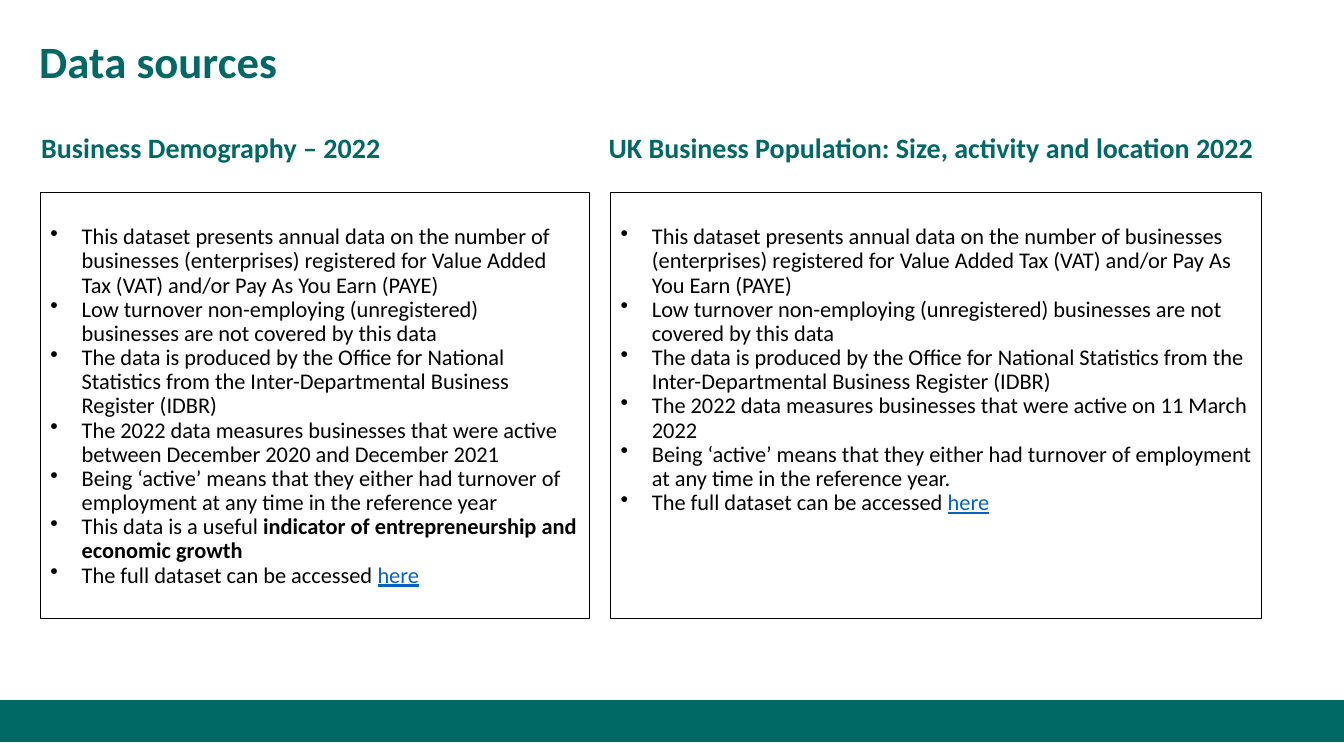
import pptx
import pptx.dml.color
import pptx.enum.shapes
import pptx.enum.text
import pptx.oxml.ns
import pptx.util
from lxml import etree

Cm = pptx.util.Cm
Pt = pptx.util.Pt
ANCHOR = pptx.enum.text.MSO_ANCHOR

COLORS = {"teal": "006965", "text": "000000", "link": "0563C1"}

SHARED = [
    [("This dataset presents annual data on the number of businesses (enterprises) "
      "registered for Value Added Tax (VAT) and/or Pay As You Earn (PAYE)", {})],
    [("Low turnover non-employing (unregistered) businesses are not covered by this data", {})],
    [("The data is produced by the Office for National Statistics from the "
      "Inter-Departmental Business Register (IDBR)", {})],
]
ACCESS = [("The full dataset can be accessed ", {}),
          ("here", {"color": "link", "underline": True})]

DEMOGRAPHY = SHARED + [
    [("The 2022 data measures businesses that were active between December 2020 "
      "and December 2021", {})],
    [("Being ‘active’ means that they either had turnover of employment at any time "
      "in the reference year", {})],
    [("This data is a useful ", {}),
     ("indicator of entrepreneurship and economic growth", {"bold": True})],
    ACCESS,
]
POPULATION = SHARED + [
    [("The 2022 data measures businesses that were active on 11 March 2022", {})],
    [("Being ‘active’ means that they either had turnover of employment at any time "
      "in the reference year.", {})],
    ACCESS,
]

# heading, heading left and width, panel left and width, bullets
COLUMNS = [
    ("Business Demography – 2022", 0.79, 12.7, 1.02, 13.84, DEMOGRAPHY),
    ("UK Business Population: Size, activity and location 2022",
     15.09, 18.77, 15.39, 16.41, POPULATION),
]


class SlideBuilder:
    font = "Calibri"
    line_spacing = 0.9
    indent = Cm(0.79)

    def __init__(self, slide):
        self.slide = slide

    def color(self, name):
        return pptx.dml.color.RGBColor.from_string(COLORS[name])

    def rect(self, left, top, width, height, line, line_width, fill=None):
        s = self.slide.shapes.add_shape(
            pptx.enum.shapes.MSO_SHAPE.RECTANGLE,
            Cm(left), Cm(top), Cm(width), Cm(height))
        s.shadow.inherit = False
        if fill:
            s.fill.solid()
            s.fill.fore_color.rgb = self.color(fill)
        else:
            s.fill.background()
        s.line.color.rgb = self.color(line)
        s.line.width = Pt(line_width)
        return s

    def run(self, p, text, size, color="text", **formats):
        r = p.add_run()
        r.text = text
        r.font.color.rgb = self.color(color)
        for name, value in {"name": self.font, "size": Pt(size), **formats}.items():
            setattr(r.font, name, value)

    def heading(self, text, left, top, width, height, size):
        s = self.slide.shapes.add_textbox(Cm(left), Cm(top), Cm(width), Cm(height))
        tf = s.text_frame
        tf.word_wrap = True
        tf.vertical_anchor = ANCHOR.MIDDLE
        p = tf.paragraphs[0]
        p.line_spacing = self.line_spacing
        self.run(p, text, size, "teal", bold=True)

    def bullet(self, p):
        p.alignment = pptx.enum.text.PP_ALIGN.LEFT
        p.line_spacing = self.line_spacing
        pPr = p._p.get_or_add_pPr()
        pPr.set("marL", str(self.indent))
        pPr.set("indent", str(-self.indent))
        etree.SubElement(pPr, pptx.oxml.ns.qn("a:buChar"), char="•")

    def panel(self, bullets, left, top, width, height):
        """Draw an outlined box with a bulleted list."""
        tf = self.rect(left, top, width, height, "text", 0.75).text_frame
        formats = {"word_wrap": True, "vertical_anchor": ANCHOR.TOP, "margin_top": Cm(0.83)}
        for name, value in formats.items():
            setattr(tf, name, value)
        for i, runs in enumerate(bullets):
            p = tf.add_paragraph() if i else tf.paragraphs[0]
            self.bullet(p)
            for text, style in runs:
                self.run(p, text, 16, **style)


def main():
    prs = pptx.Presentation()
    prs.slide_width, prs.slide_height = Cm(33.87), Cm(19.05)
    builder = SlideBuilder(prs.slides.add_slide(prs.slide_layouts[6]))

    builder.rect(0, 17.65, 33.87, 1.02, "teal", 1, fill="teal")
    builder.heading("Data sources", 0.74, 0.64, 29.21, 1.93, 32)
    for title, title_left, title_width, left, width, bullets in COLUMNS:
        builder.heading(title, title_left, 2.9, title_width, 1.75, 20)
        builder.panel(bullets, left, 4.85, width, 10.74)

    prs.save("out.pptx")


if __name__ == "__main__":
    main()
